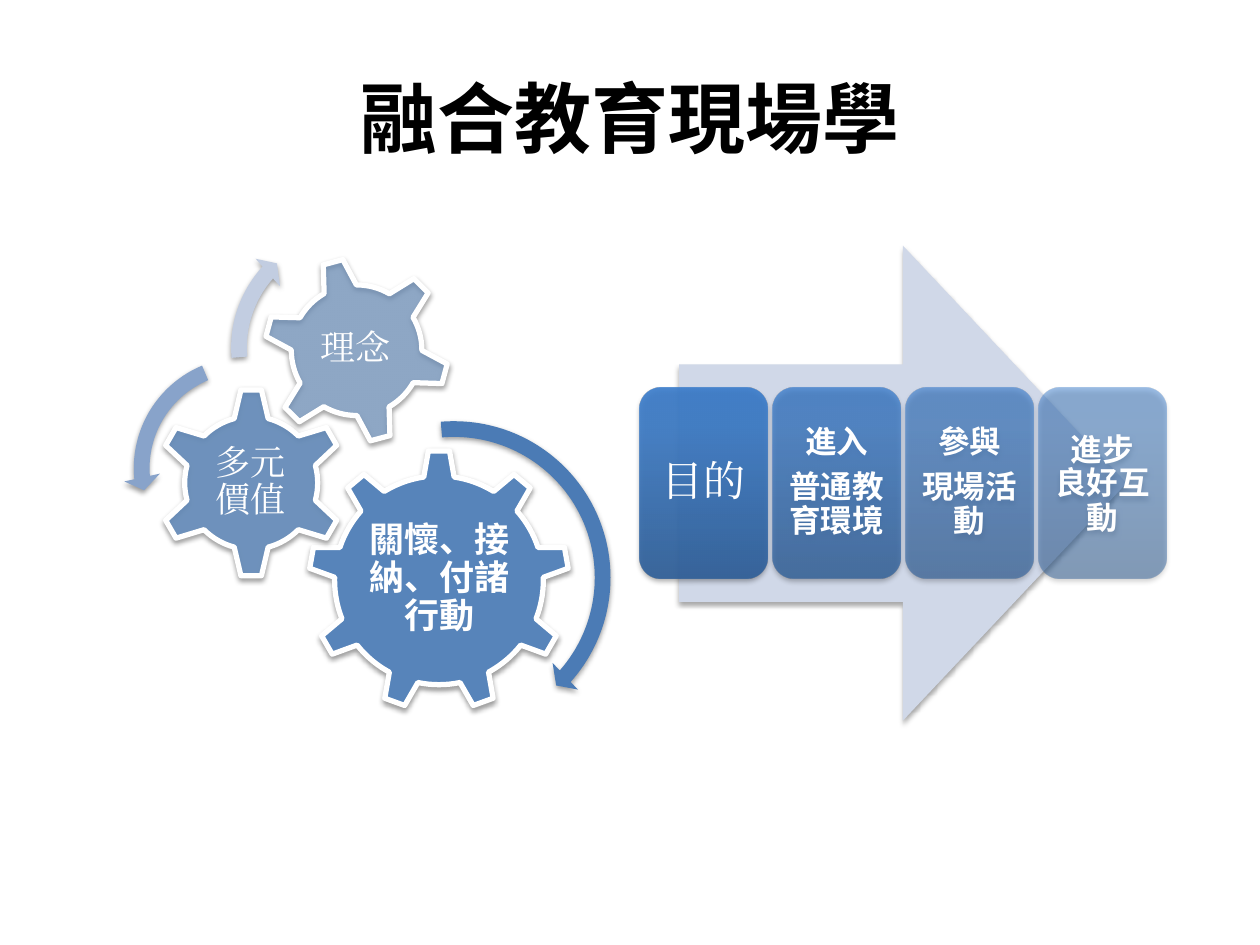
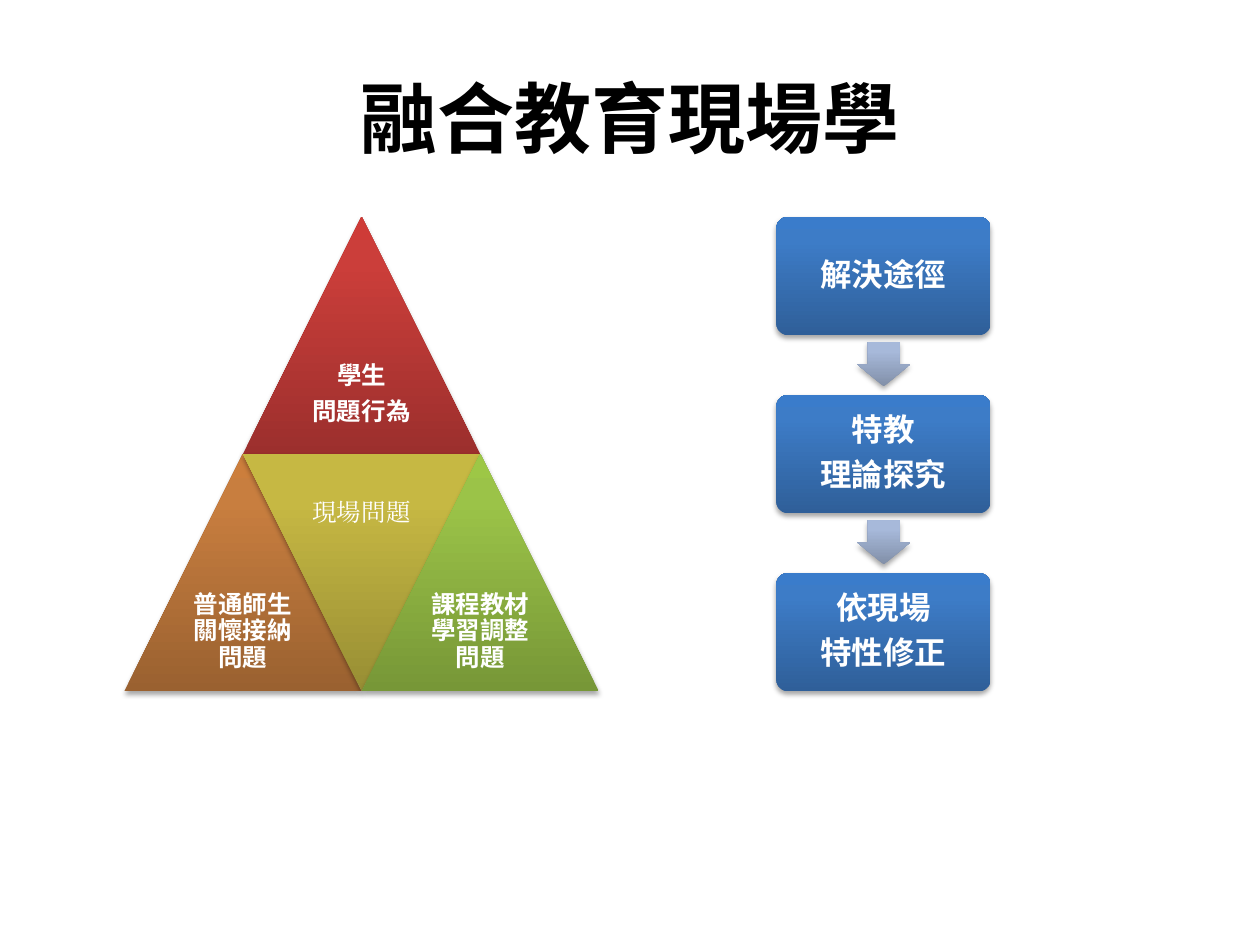
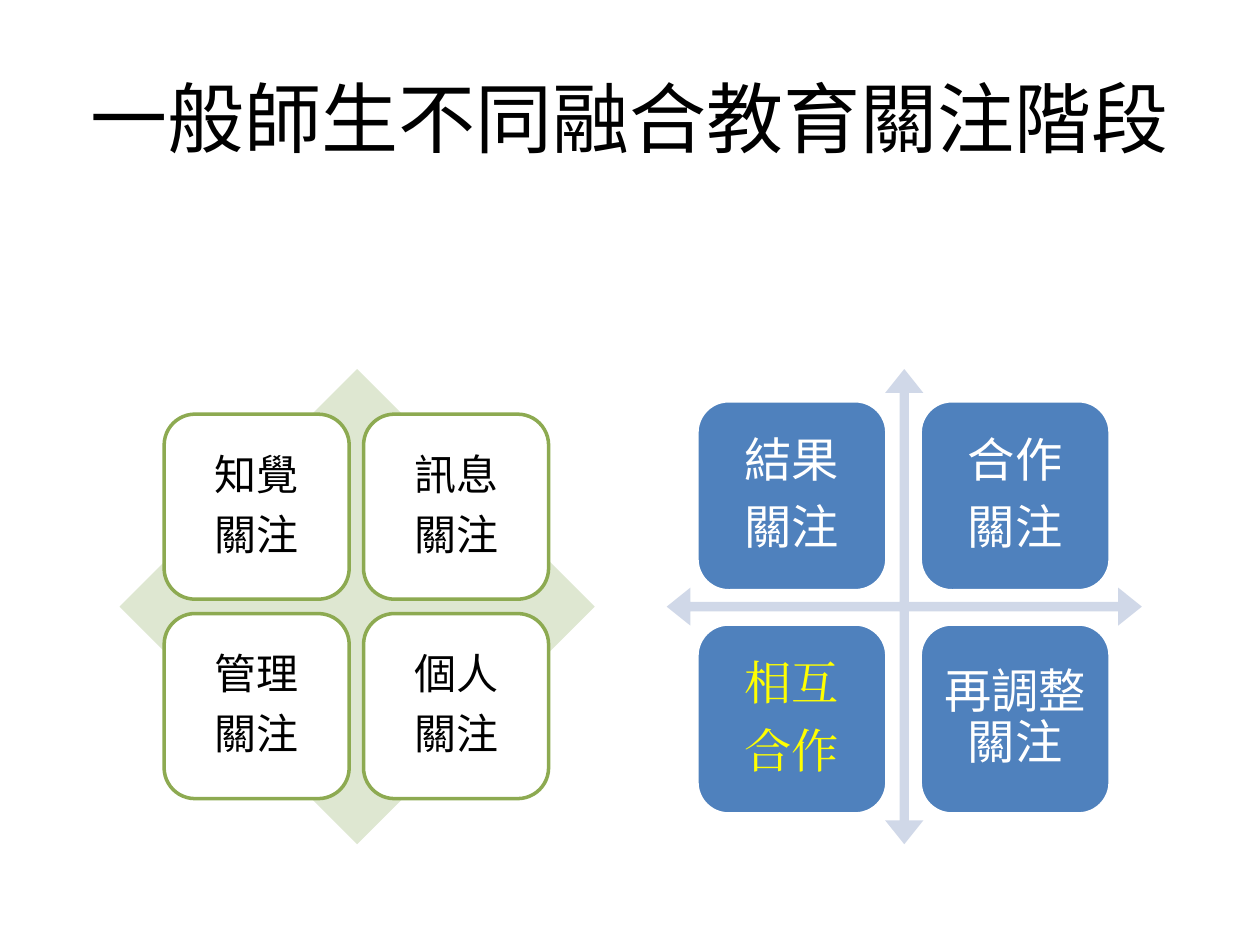
from lxml import etree
from pptx import Presentation
from pptx import util as u
from pptx.dml.color import RGBColor
from pptx.enum import shapes, text
from pptx.oxml.ns import qn

Cm, Pt = u.Cm, u.Pt
KIND = shapes.MSO_SHAPE

WHITE = RGBColor(0xFF, 0xFF, 0xFF)
BLACK = RGBColor(0, 0, 0)
YELLOW = RGBColor(0xFF, 0xFF, 0)
BLUE = RGBColor(0x4F, 0x81, 0xBD)
PALE_BLUE = RGBColor(0xD0, 0xD8, 0xE8)
DEEP_SWEEP = RGBColor(0x4B, 0x7B, 0xB5)
MID_SWEEP = RGBColor(0x88, 0xA3, 0xCA)
LIGHT_SWEEP = RGBColor(0xC2, 0xCD, 0xE1)
GREEN = RGBColor(0x8D, 0xAA, 0x51)
PALE_GREEN = RGBColor(0xDE, 0xE7, 0xD1)


def shades(*codes):
    return [RGBColor.from_string(code) for code in codes]


BLUE_SHADES = shades("2F5F99", "3D7CC7", "3A7CCB")
GREY_SHADES = shades("818FA8", "A7B9DA", "A7BADC")
RED_SHADES = shades("9C2F2D", "CB3E3A", "CE3B37")
ORANGE_SHADES = shades("9A6130", "C87E3F", "CC7E3C")
GOLD_SHADES = shades("988E34", "C6B843", "C9BB41")
LIME_SHADES = shades("779737", "9BC348", "9DC746")
SHADE_STOPS = (0, 80, 100)

TITLE_FONT = "Noto Sans CJK SC"
SANS = "Arial"
SERIF = "TeX Gyre Pagella"

RAISED = {"alpha": 35, "dist": 1.8}
GEAR_SHADOW = {"alpha": 38, "dist": 1.6}


def apply(target, values):
    for name, value in values.items():
        setattr(target, name, value)


def add_colour(parent, colour, alpha):
    node = etree.SubElement(parent, qn("a:srgbClr"), val=str(colour))
    if alpha < 100:
        etree.SubElement(node, qn("a:alpha"), val=str(alpha * 1000))


def fill_solid(shape, colour, alpha):
    shape.fill.solid()
    solid = shape._element.spPr.find(qn("a:solidFill"))
    add_colour(solid, colour, alpha)


def fill_shades(shape, colours, alpha):
    shape.fill.gradient()
    shape.fill.gradient_angle = (90 + shape.rotation) % 360
    stops = shape._element.spPr.find(".//" + qn("a:gsLst"))
    for old in list(stops):
        stops.remove(old)
    for position, colour in zip(SHADE_STOPS, colours):
        stop = etree.SubElement(stops, qn("a:gs"), pos=str(position * 1000))
        add_colour(stop, colour, alpha)


def cast_shadow(shape, alpha, dist):
    effects = shape._element.spPr.find(qn("a:effectLst"))
    outer = etree.SubElement(
        effects, qn("a:outerShdw"), blurRad=str(Pt(3.1)), dist=str(Pt(dist)),
        dir="5400000", rotWithShape="0")
    add_colour(outer, BLACK, alpha)


def add_figure(slide, kind, place, fill, alpha=100, line=None, shadow=None,
               rotation=0, adjust=()):
    figure = slide.shapes.add_shape(kind, *(Cm(length) for length in place))
    figure.rotation = rotation
    for index, percent in enumerate(adjust):
        figure.adjustments[index] = percent / 100
    if isinstance(fill, list):
        fill_shades(figure, fill, alpha)
    else:
        fill_solid(figure, fill, alpha)
    if line:
        colour, width = line
        figure.line.color.rgb = colour
        figure.line.width = Pt(width)
    else:
        figure.line.fill.background()
    figure.shadow.inherit = False
    if shadow:
        cast_shadow(figure, **shadow)
    return figure


def write(shape, lines, size, font=SANS, colour=WHITE, bold=False,
          inset=0.25, spaced=True, unspaced=0):
    frame = shape.text_frame
    apply(frame, {"word_wrap": True,
                  "vertical_anchor": text.MSO_ANCHOR.MIDDLE,
                  "margin_left": Cm(inset), "margin_right": Cm(inset),
                  "margin_top": Cm(inset), "margin_bottom": Cm(inset)})
    for index, line in enumerate(lines):
        paragraph = frame.paragraphs[0] if index == 0 else frame.add_paragraph()
        paragraph.alignment = text.PP_ALIGN.CENTER
        if spaced and index >= unspaced:
            apply(paragraph, {"line_spacing": 0.9,
                              "space_after": Pt(0.35 * size)})
        run = paragraph.add_run()
        run.text = line
        apply(run.font, {"size": Pt(size), "bold": bold, "name": font})
        run.font.color.rgb = colour
        latin = run._r.rPr.find(qn("a:latin"))
        latin.addnext(latin.makeelement(qn("a:ea"), {"typeface": font}))


def add_label(slide, place, lines, size, **style):
    box = slide.shapes.add_textbox(*(Cm(length) for length in place))
    write(box, lines, size, **style)


def add_titled_slide(deck, title, bold=True):
    slide = deck.slides.add_slide(deck.slide_layouts[6])
    add_label(slide, (1.27, 0.76, 22.86, 3.18), [title], 44,
              font=TITLE_FONT, colour=BLACK, bold=bold, inset=0.13, spaced=False)
    return slide


def add_purpose_arrow(slide):
    add_figure(slide, KIND.RIGHT_ARROW, (13.69, 4.95, 9.02, 9.58), PALE_BLUE,
               shadow=RAISED)
    heading = {"size": 24, "font": SERIF}
    stage = {"size": 18, "bold": True, "inset": 0.18}
    steps = [
        (["目的"], 90, heading),
        (["進入", "普通教育環境"], 77, stage),
        (["參與", "現場活動"], 63, stage),
        (["進步", "良好互動"], 50, {**stage, "unspaced": 1}),
    ]
    for index, (lines, alpha, style) in enumerate(steps):
        step = add_figure(slide, KIND.ROUNDED_RECTANGLE,
                          (12.9 + 2.68 * index, 7.82, 2.57, 3.83),
                          BLUE_SHADES, alpha, shadow=RAISED)
        write(step, lines, **style)


def add_gears(slide):
    gears = [
        (KIND.GEAR_9, (6.22, 9.07, 5.26, 5.26), 90, 0,
         "關懷、接納、付諸行動", (7.29, 10.31, 3.15, 2.72),
         {"font": SANS, "bold": True}),
        (KIND.GEAR_6, (3.15, 7.82, 3.83, 3.83), 70, 0,
         "多元價值", (4.11, 8.79, 1.9, 1.88), {"font": SERIF}),
        (KIND.GEAR_6, (5.31, 5.18, 3.76, 3.76), 50, 345,
         "理念", (6.12, 5.99, 2.11, 2.11), {"font": SERIF}),
    ]
    for kind, place, alpha, rotation, words, label_place, style in gears:
        add_figure(slide, kind, place, BLUE, alpha, line=(WHITE, 3),
                   shadow=GEAR_SHADOW, rotation=rotation)
        add_label(slide, label_place, [words], 20, inset=0.08, **style)

    sweeps = [
        (KIND.CIRCULAR_ARROW, (5.79, 8.28, 6.73, 6.73), DEEP_SWEEP,
         (4.7, 299, 2495.3, 15906.9, 5.5)),
        (KIND.LEFT_CIRCULAR_ARROW, (2.49, 6.99, 4.9, 4.9), MID_SWEEP,
         (6.5, 430, 10489.1, 14837.8, 7.5)),
        (KIND.CIRCULAR_ARROW, (4.45, 4.37, 5.28, 5.28), LIGHT_SWEEP,
         (6, 394.1, 13313.8, 10508.2, 7)),
    ]
    for kind, place, colour, adjust in sweeps:
        add_figure(slide, kind, place, colour, shadow=GEAR_SHADOW, adjust=adjust)


def add_problem_pyramid(slide):
    side, left, top = 4.78, 2.51, 4.37
    half = side / 2
    corners = [
        (1, 0, RED_SHADES, ["學生", "問題行為"]),
        (0, 1, ORANGE_SHADES, ["普通師生關懷接納問題"]),
        (2, 1, LIME_SHADES, ["課程教材學習調整問題"]),
    ]

    def place(column, row):
        return left + half * column, top + side * row, side, side

    def add_corner(column, row, colours, lines):
        corner = add_figure(slide, KIND.ISOSCELES_TRIANGLE, place(column, row),
                            colours, shadow=RAISED)
        write(corner, lines, 14, bold=True, inset=0.15)

    for corner in corners[:2]:
        add_corner(*corner)
    add_figure(slide, KIND.ISOSCELES_TRIANGLE, place(1, 1), GOLD_SHADES,
               shadow=RAISED, rotation=180)
    add_label(slide, (left + half * 1.5, top + side, half, half), ["現場問題"],
              14, font=SERIF, inset=0.15)
    add_corner(*corners[2])


def add_solution_path(slide):
    stages = [["解決途徑"], ["特教", "理論探究"], ["依現場", "特性修正"]]
    pitch = 3.59
    for index, lines in enumerate(stages):
        if index:
            add_figure(slide, KIND.RIGHT_ARROW,
                       (17.37, 6.81 + pitch * (index - 1), 0.89, 1.07),
                       GREY_SHADES, shadow=RAISED, rotation=90, adjust=(60, 50))
        stage = add_figure(slide, KIND.ROUNDED_RECTANGLE,
                           (15.65, 4.37 + pitch * index, 4.32, 2.39),
                           BLUE_SHADES, shadow=RAISED, adjust=(10,))
        write(stage, lines, 18, bold=True, inset=0.18)


def add_concern_grid(slide, concerns, left, top, side, pitch, fill, line, **style):
    for index, (lines, own_style) in enumerate(concerns):
        row, column = divmod(index, 2)
        tile = add_figure(slide, KIND.ROUNDED_RECTANGLE,
                          (left + pitch * column, top + pitch * row, side, side),
                          fill, line=(line, 2))
        write(tile, lines, **{**style, **own_style})


def main():
    deck = Presentation()
    apply(deck, {"slide_width": Cm(25.4), "slide_height": Cm(19.05)})

    purpose = add_titled_slide(deck, "融合教育現場學")
    add_purpose_arrow(purpose)
    add_gears(purpose)

    problems = add_titled_slide(deck, "融合教育現場學")
    add_problem_pyramid(problems)
    add_solution_path(problems)

    stages = add_titled_slide(deck, "一般師生不同融合教育關注階段", bold=False)
    add_figure(stages, KIND.DIAMOND, (2.41, 7.44, 9.58, 9.58), PALE_GREEN)
    early = [([name, "關注"], {}) for name in ("知覺", "訊息", "管理", "個人")]
    add_concern_grid(stages, early, 3.31, 8.35, 3.73, 4.02, WHITE, GREEN,
                     size=24, colour=BLACK)
    add_figure(stages, KIND.QUAD_ARROW, (13.44, 7.44, 9.58, 9.58), PALE_BLUE,
               adjust=(2, 4, 5))
    late = [
        (["結果", "關注"], {}),
        (["合作", "關注"], {}),
        (["相互", "合作"], {"font": SERIF, "colour": YELLOW}),
        (["再調整關注"], {}),
    ]
    add_concern_grid(stages, late, 14.05, 8.08, 3.83, 4.5, BLUE, WHITE,
                     size=27, inset=0.28)

    deck.save("out.pptx")


if __name__ == "__main__":
    main()
